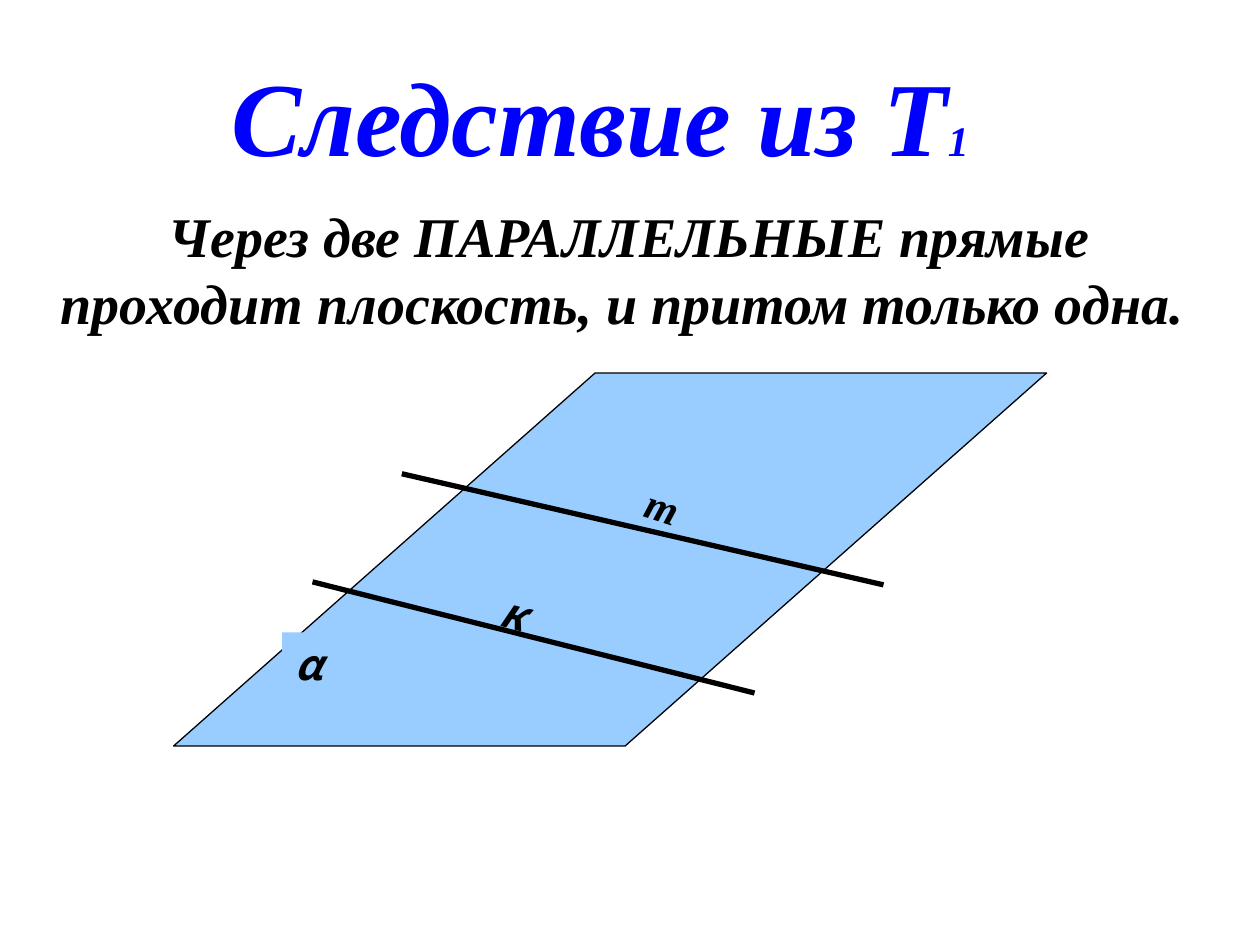
import pptx
import pptx.dml.color
import pptx.enum.shapes
import pptx.enum.text
import pptx.oxml.ns
import pptx.util
from lxml import etree

Cm = pptx.util.Cm
Shape = pptx.enum.shapes.MSO_SHAPE
Align = pptx.enum.text.PP_ALIGN
SERIF = "Times New Roman"
SANS = "Noto Sans CJK JP"
PLANE = "99CCFF"


def color(value):
    return pptx.dml.color.RGBColor.from_string(value)


def write(box, pieces, font, ink, align):
    frame = box.text_frame
    frame.word_wrap = True
    frame.auto_size = pptx.enum.text.MSO_AUTO_SIZE.SHAPE_TO_FIT_TEXT
    frame.vertical_anchor = pptx.enum.text.MSO_ANCHOR.TOP
    para = frame.paragraphs[0]
    para.alignment = align
    for words, size in pieces:
        span = para.add_run()
        span.text = words
        span.font.size = pptx.util.Pt(size)
        span.font.bold = span.font.italic = True
        span.font.color.rgb = color(ink)
        span.font.name = font
        for tag in ("a:ea", "a:cs"):
            face = etree.SubElement(span.font._element, pptx.oxml.ns.qn(tag))
            face.set("typeface", font)


deck = pptx.Presentation()
deck.slide_width, deck.slide_height = Cm(25.4), Cm(19.05)
page = deck.slides.add_slide(deck.slide_layouts[6])

theorem = page.shapes.add_textbox(Cm(0.69), Cm(3.94), Cm(24), Cm(2.97))
write(theorem, [("Через две ПАРАЛЛЕЛЬНЫЕ прямые проходит плоскость, и притом только одна. ", 32)],
      SERIF, "000000", Align.CENTER)

plane = page.shapes.add_shape(Shape.PARALLELOGRAM, Cm(3.5), Cm(7.52), Cm(17.6), Cm(7.52))
plane.adjustments[0] = 1.13
plane.line.color.rgb = color("000000")
plane.line.width = pptx.util.Pt(0.75)

alpha = page.shapes.add_shape(Shape.RECTANGLE, Cm(5.69), Cm(12.75), Cm(0.84), Cm(1.27))
alpha.line.fill.background()
write(alpha, [("α", 24)], SANS, "000000", Align.LEFT)

for shape in (plane, alpha):
    shape.shadow.inherit = False
    shape.fill.solid()
    shape.fill.fore_color.rgb = color(PLANE)

for name, font, left, top, width, angle, start, end in (
    ("m", SERIF, 12.8, 9.53, 0.91, 18, (8.1, 9.55), (17.81, 11.79)),
    ("к", SANS, 9.86, 11.71, 0.99, 14.9, (6.3, 11.73), (15.21, 13.97)),
):
    line = page.shapes.add_connector(
        pptx.enum.shapes.MSO_CONNECTOR.STRAIGHT, *map(Cm, start + end))
    line.line.color.rgb = color("000000")
    line.line.width = pptx.util.Pt(3)
    etree.SubElement(line._element.spPr, pptx.oxml.ns.qn("a:effectLst"))
    label = page.shapes.add_textbox(Cm(left), Cm(top), Cm(width), Cm(1.27))
    label.rotation = angle
    write(label, [(name, 24)], font, "000000", Align.LEFT)

title = page.shapes.add_textbox(Cm(1.7), Cm(0.91), Cm(20.8), Cm(2.79))
write(title, [("Следствие из Т", 60), ("1", 24)], SERIF, "0000FF", Align.CENTER)

deck.save("out.pptx")
